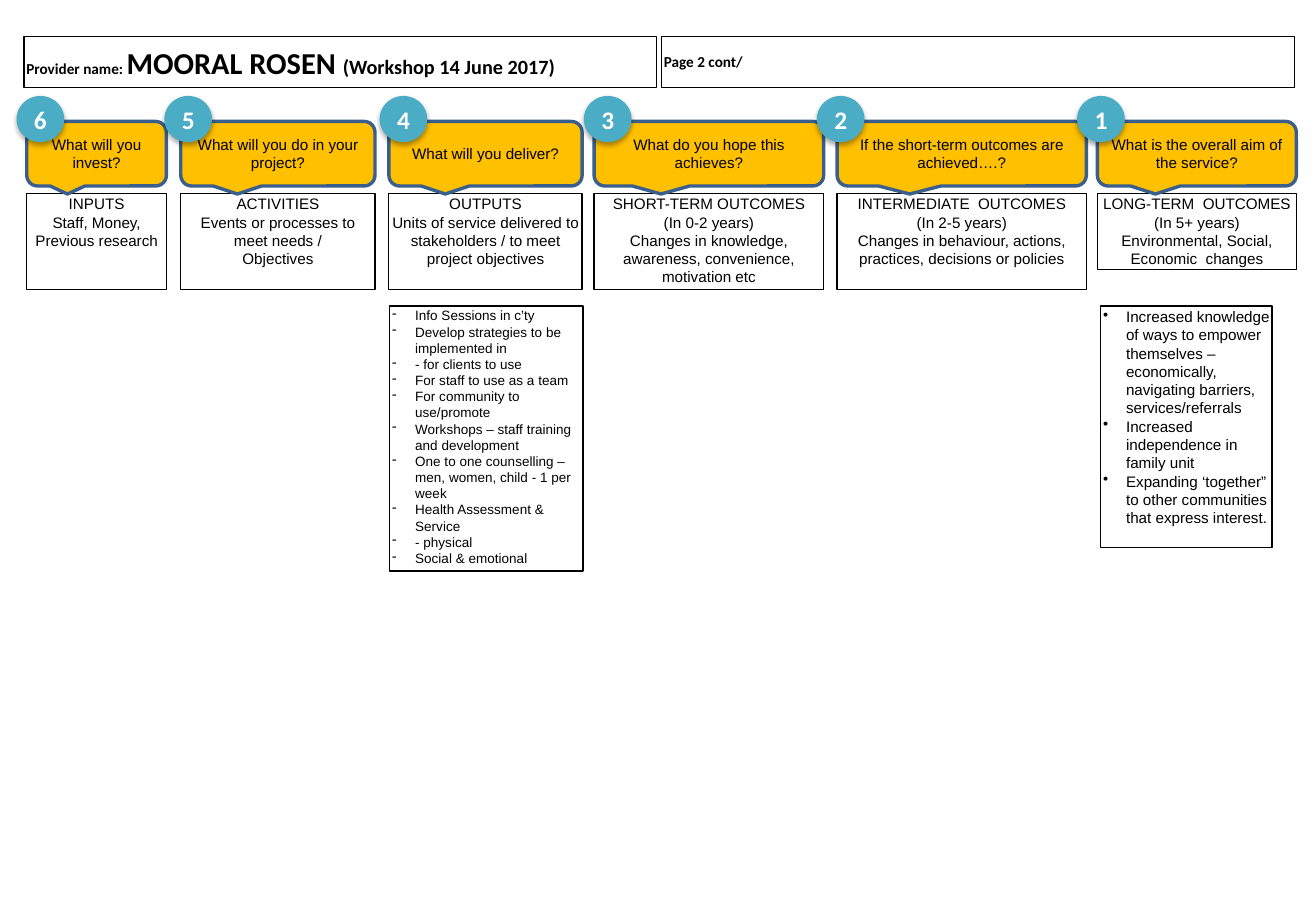
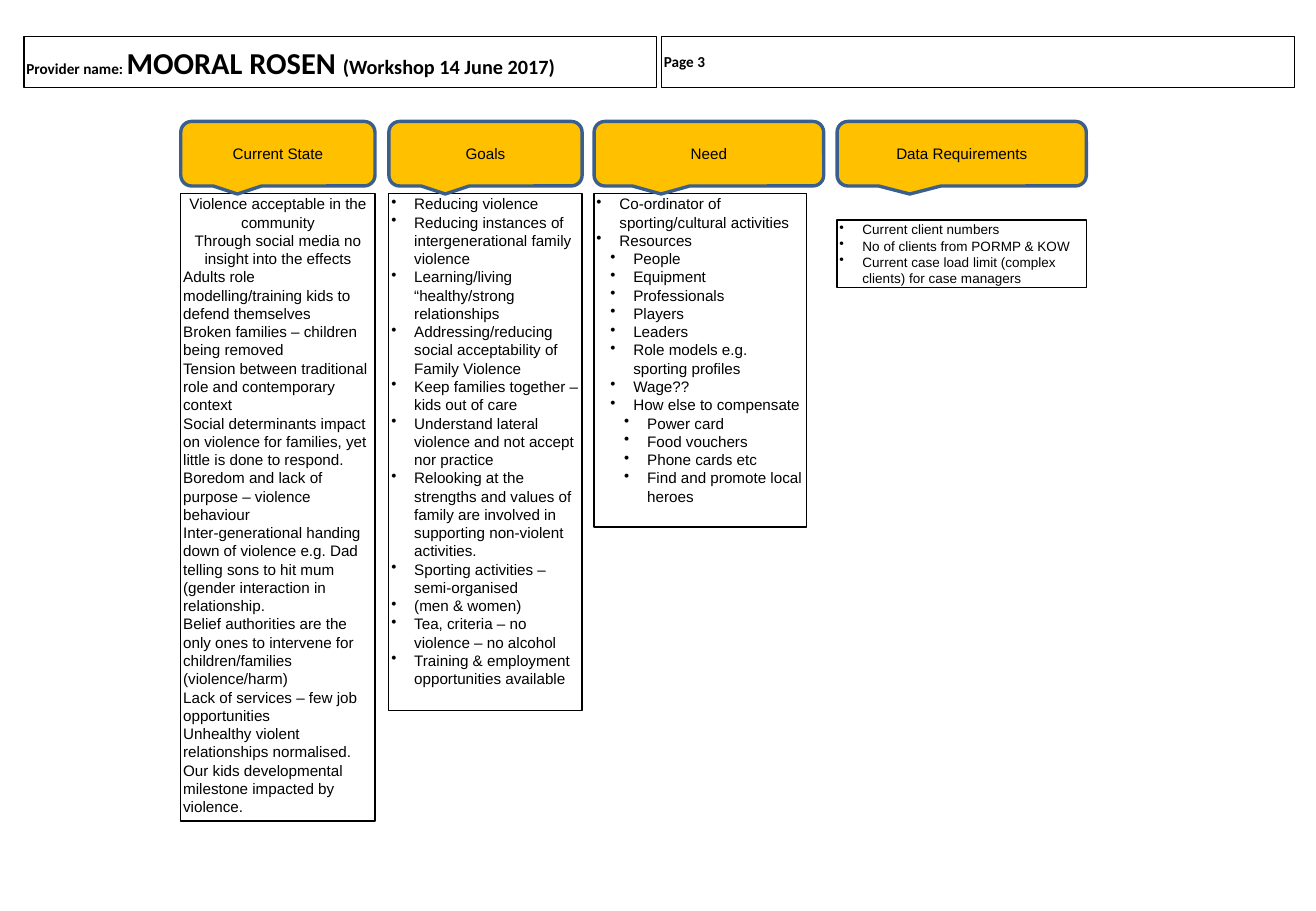
import pptx
import pptx.dml.color
import pptx.enum.shapes
import pptx.enum.text
import pptx.oxml
import pptx.oxml.ns
import pptx.util

Cm = pptx.util.Cm
Pt = pptx.util.Pt
RGBColor = pptx.dml.color.RGBColor
SHAPES = pptx.enum.shapes.MSO_SHAPE
ALIGN = pptx.enum.text.PP_ALIGN
ANCHOR = pptx.enum.text.MSO_ANCHOR
qn = pptx.oxml.ns.qn

BLACK = RGBColor(0x00, 0x00, 0x00)
WHITE = RGBColor(0xFF, 0xFF, 0xFF)
AMBER = RGBColor(0xFF, 0xC0, 0x00)
BLUE = RGBColor(0x3A, 0x5F, 0x8C)
TEAL = RGBColor(0x4B, 0xAC, 0xC6)

# Lengths in centimetres: left and width of the six columns
COLUMNS = [(0.56, 2.92), (3.78, 4.06), (8.13, 4.04),
           (12.42, 4.8), (17.5, 5.21), (22.94, 4.16)]
HEADER_TOP, HEADER_WIDTH, HEADER_HEIGHT = 0.76, 13.23, 1.07
CALLOUT_TOP, CALLOUT_HEIGHT = 2.54, 1.35
BOX_TOP, BOX_HEIGHT = 4.04, 2.01
BADGE_TOP, BADGE_WIDTH, BADGE_HEIGHT = 2.02, 0.97, 0.94
BULLET_INDENT, LEVEL_STEP = 0.48, 0.29

# Question, badge left, heading and explanation of each column
STAGES = [
    ("What will you invest?", 0.36,
     ["INPUTS", "Staff, Money, Previous research"]),
    ("What will you do in your project?", 3.45,
     ["ACTIVITIES", "Events or processes to meet needs /", "Objectives"]),
    ("What will you deliver?", 7.95,
     ["OUTPUTS", "Units of service delivered to stakeholders / to meet project objectives"]),
    ("What do you hope this achieves?", 12.22,
     ["SHORT-TERM OUTCOMES", "(In 0-2 years)",
      "Changes in knowledge, awareness, convenience, motivation etc"]),
    ("If the short-term outcomes are achieved….?", 17.09,
     ["INTERMEDIATE  OUTCOMES", "(In 2-5 years)",
      "Changes in behaviour, actions, practices, decisions or policies"]),
    ("What is the overall aim of the service?", 22.53,
     ["LONG-TERM  OUTCOMES", "(In 5+ years)",
      "Environmental, Social, Economic  changes"]),
]
OUTPUTS = [
    "Info Sessions in c’ty",
    "Develop strategies to be implemented in",
    "- for clients to use",
    "For staff to use as a team",
    "For community to use/promote",
    "Workshops – staff training and development",
    "One to one counselling – men, women, child - 1 per week",
    "Health Assessment & Service",
    "- physical",
    "Social & emotional",
]
LONG_TERM = [
    "Increased knowledge of ways to empower themselves – economically, "
    "navigating barriers, services/referrals",
    "Increased independence in family unit",
    "Expanding ‘together” to other communities that express interest.",
]
CURRENT_STATE_LEAD = [
    "Violence acceptable in the community",
    "Through social media no insight into the effects",
]
CURRENT_STATE = [
    "Adults role modelling/training kids to defend themselves",
    "Broken families – children being removed",
    "Tension between traditional role and contemporary context",
    "Social determinants impact on violence for families, yet little is done to respond.",
    "Boredom and lack of purpose – violence behaviour",
    "Inter-generational handing down of violence e.g. Dad telling sons to hit mum "
    "(gender interaction in relationship.",
    "Belief authorities are the only ones to intervene for children/families (violence/harm)",
    "Lack of services – few job opportunities",
    "Unhealthy violent relationships normalised.",
    "Our kids developmental milestone impacted by violence.",
]
GOALS = [
    "Reducing violence",
    "Reducing instances of intergenerational family violence",
    "Learning/living “healthy/strong relationships",
    "Addressing/reducing social acceptability of Family Violence",
    "Keep families together – kids out of care",
    "Understand lateral violence and not accept nor practice",
    "Relooking at the strengths and values of family are involved in "
    "supporting non-violent activities.",
    "Sporting activities – semi-organised",
    "(men & women)",
    "Tea, criteria – no violence – no alcohol",
    "Training & employment opportunities available",
]
# Needs by list level
NEEDS = [
    (0, ["Co-ordinator of sporting/cultural activities", "Resources"]),
    (1, ["People", "Equipment", "Professionals", "Players", "Leaders",
         "Role models e.g. sporting profiles", "Wage??", "How else to compensate"]),
    (2, ["Power card", "Food vouchers", "Phone cards etc",
         "Find and promote local heroes"]),
]
DATA = [
    "Current client numbers",
    "No of clients from PORMP & KOW",
    "Current case load limit (complex clients) for case managers",
]


def add_span(para, text, size=9, font="Arial", color=BLACK, bold=False):
    span = para.add_run()
    span.text = text
    span.font.size = Pt(size)
    span.font.name = font
    span.font.color.rgb = color
    span.font.bold = bold


def add_paras(shape, texts, align=ALIGN.LEFT, bullet=None, level=0, **format):
    """Append one paragraph per text, using the empty first one if there is one."""
    frame = shape.text_frame
    for text in texts:
        para = frame.paragraphs[-1] if not frame.text else frame.add_paragraph()
        para.alignment = align
        para.level = level
        if bullet:
            properties = para._p.get_or_add_pPr()
            properties.set("marL", str(Cm(BULLET_INDENT + level * LEVEL_STEP)))
            properties.set("indent", str(-Cm(BULLET_INDENT)))
            mark = pptx.oxml.parse_xml(
                f'<a:buChar {pptx.oxml.ns.nsdecls("a")} char="{bullet}"/>')
            properties.append(mark)
        add_span(para, text, **format)


def style_shape(shape, fill=None, line=BLACK, weight=0.75, anchor=ANCHOR.MIDDLE):
    if fill is None:
        shape.fill.background()
    else:
        shape.fill.solid()
        shape.fill.fore_color.rgb = fill
    shape.line.color.rgb = line
    shape.line.width = Pt(weight)
    frame = shape.text_frame
    frame.word_wrap = True
    frame.auto_size = pptx.enum.text.MSO_AUTO_SIZE.NONE
    frame.vertical_anchor = anchor
    frame.margin_left = frame.margin_right = Cm(0.05)
    frame.margin_top = frame.margin_bottom = Cm(0.03)


def add_shape(slide, kind, left, top, width, height, **style):
    shape = slide.shapes.add_shape(kind, Cm(left), Cm(top), Cm(width), Cm(height))
    shape.shadow.inherit = False
    style_shape(shape, **style)
    return shape


def add_box(slide, left, top, width, height, texts=(), **format):
    box = add_shape(slide, SHAPES.RECTANGLE, left, top, width, height, anchor=ANCHOR.TOP)
    add_paras(box, texts, **format)
    return box


def add_callout(slide, column, text):
    left, width = COLUMNS[column]
    callout = add_shape(slide, SHAPES.ROUNDED_RECTANGULAR_CALLOUT, left, CALLOUT_TOP,
                        width, CALLOUT_HEIGHT, fill=AMBER, line=BLUE, weight=2)
    add_paras(callout, [text], align=ALIGN.CENTER)


def add_badge(slide, left, number):
    badge = add_shape(slide, SHAPES.OVAL, left, BADGE_TOP, BADGE_WIDTH, BADGE_HEIGHT,
                      fill=TEAL, line=TEAL)
    add_paras(badge, [str(number)], align=ALIGN.CENTER,
              size=15, font="Calibri", color=WHITE, bold=True)
    shadow = pptx.oxml.parse_xml(
        f'<a:outerShdw {pptx.oxml.ns.nsdecls("a")} blurRad="{Pt(3.1)}" dist="{Pt(1.8)}" '
        'dir="5400000" rotWithShape="0"><a:srgbClr val="000000">'
        '<a:alpha val="35000"/></a:srgbClr></a:outerShdw>')
    badge._element.spPr.find(qn("a:effectLst")).append(shadow)


def add_page(deck, label):
    """Add a slide with the provider title and the page label."""
    slide = deck.slides.add_slide(deck.slide_layouts[5])
    title = slide.shapes.title
    title.left, title.top = Cm(0.5), Cm(HEADER_TOP)
    title.width, title.height = Cm(HEADER_WIDTH), Cm(HEADER_HEIGHT)
    style_shape(title)
    para = title.text_frame.paragraphs[0]
    para.alignment = ALIGN.LEFT
    for text, size in [("Provider name: ", 9), ("MOORAL ROSEN ", 18),
                       ("(Workshop 14 June 2017)", 12)]:
        add_span(para, text, size=size, font="Calibri", bold=True)
    page_box = add_shape(slide, SHAPES.RECTANGLE, 13.83, HEADER_TOP,
                         HEADER_WIDTH, HEADER_HEIGHT)
    add_paras(page_box, [label], font="Calibri", bold=True)
    return slide


def build_outcomes(deck):
    slide = add_page(deck, "Page 2 cont/")
    for column, (question, badge_left, texts) in enumerate(STAGES):
        left, width = COLUMNS[column]
        height = 1.6 if column == len(STAGES) - 1 else BOX_HEIGHT
        add_box(slide, left, BOX_TOP, width, height, texts, align=ALIGN.CENTER)
        add_callout(slide, column, question)
    for column, (question, badge_left, texts) in enumerate(STAGES):
        add_badge(slide, badge_left, len(STAGES) - column)
    add_box(slide, 8.15, 6.4, 4.04, 5.54, OUTPUTS, bullet="-", size=8)
    add_box(slide, 23.01, 6.4, 3.58, 5.05, LONG_TERM, bullet="•")


def build_needs(deck):
    slide = add_page(deck, "Page 3")
    (state_left, state_width), (goals_left, goals_width) = COLUMNS[1:3]
    (needs_left, _), (data_left, data_width) = COLUMNS[3:5]
    state_box = add_box(slide, state_left, BOX_TOP, state_width, 13.13,
                        CURRENT_STATE_LEAD, align=ALIGN.CENTER)
    add_paras(state_box, CURRENT_STATE)
    add_box(slide, goals_left, BOX_TOP, goals_width, 10.82, GOALS, bullet="•")
    needs_box = add_box(slide, needs_left, BOX_TOP, 4.44, 6.98)
    for level, texts in NEEDS:
        add_paras(needs_box, texts, bullet="•", level=level)
    add_box(slide, data_left, 4.6, data_width, 1.42, DATA, bullet="•", size=8)
    headings = ["Current State", "Goals", "Need", "Data Requirements"]
    for column, heading in enumerate(headings, start=1):
        add_callout(slide, column, heading)


def main():
    deck = pptx.Presentation()
    deck.slide_width, deck.slide_height = Cm(27.51), Cm(19.05)
    build_outcomes(deck)
    build_needs(deck)
    deck.save("out.pptx")


if __name__ == "__main__":
    main()
